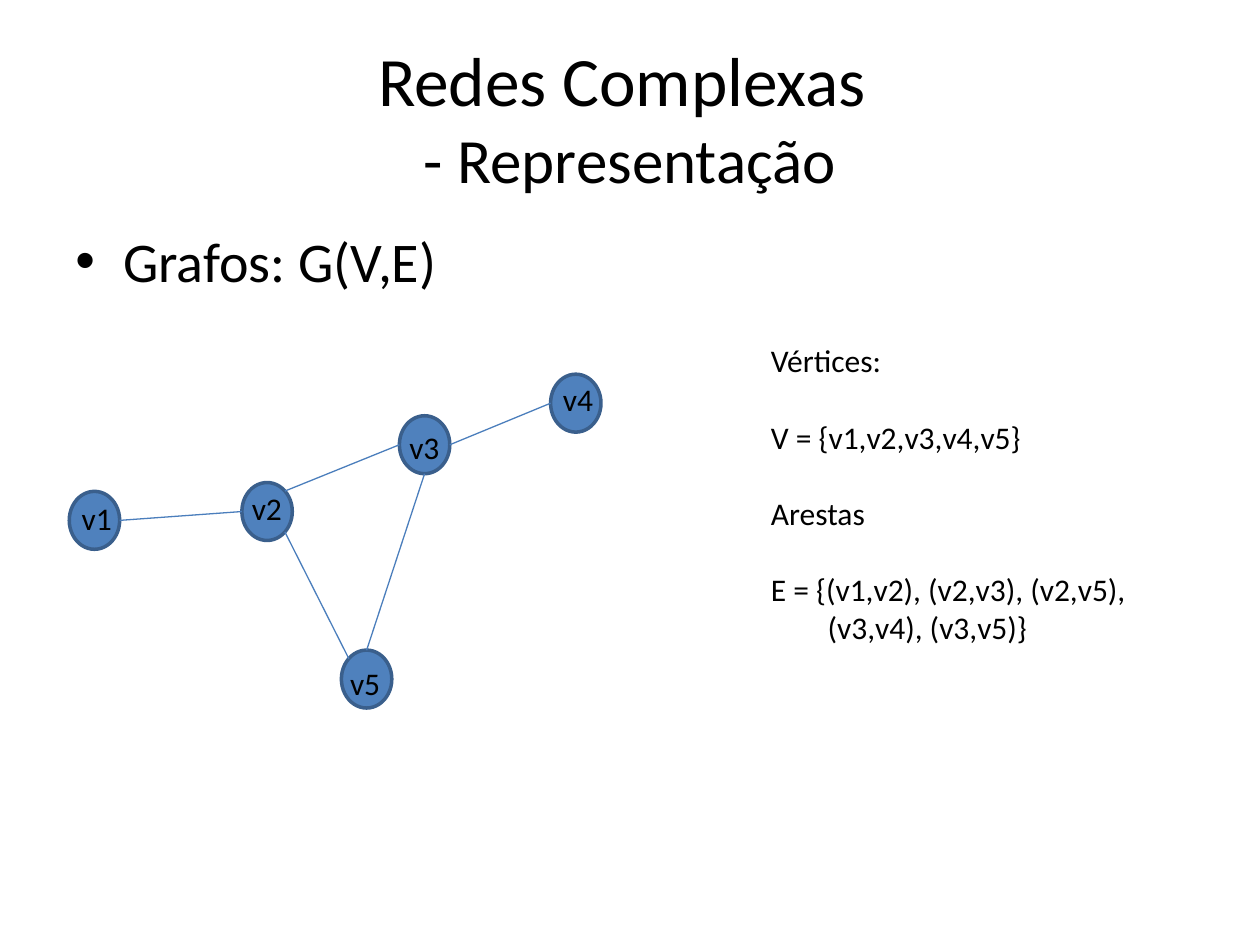
import math
from dataclasses import dataclass

import pptx
import pptx.dml.color
import pptx.enum.shapes
import pptx.enum.text
import pptx.util
from lxml import etree
from pptx.oxml.ns import qn
from pptx.util import Inches, Pt


@dataclass(frozen=True)
class Theme:
    font: str = "Calibri"
    ink: str = "000000"
    node_fill: str = "4F81BD"
    node_line: str = "3A5F8C"
    edge_line: str = "4B7EBC"
    title_size: float = 39.6
    subtitle_size: float = 36
    body_size: float = 32
    label_size: float = 18
    node_line_width: float = 2
    edge_line_width: float = 0.75


@dataclass(frozen=True)
class Vertex:
    left: float
    top: float
    label_left: float
    label_top: float


@dataclass(frozen=True)
class Edge:
    start: str
    start_angle: int
    end: str
    end_angle: int


@dataclass(frozen=True)
class Line:
    text: str
    space_before: float = 0
    indent: float = 0


THEME = Theme()
NODE_WIDTH, NODE_HEIGHT = 0.4, 0.46
LABEL_WIDTH, LABEL_HEIGHT = 0.44, 0.4
RIGHT, TOP_RIGHT, TOP, TOP_LEFT, LEFT, BOTTOM, BOTTOM_RIGHT = 0, 45, 90, 135, 180, 270, 315
BLANK_LINE = 22

VERTICES = {
    "v1": Vertex(0.55, 3.9, 0.55, 3.91),
    "v2": Vertex(1.92, 3.83, 1.9, 3.83),
    "v3": Vertex(3.17, 3.3, 3.15, 3.35),
    "v4": Vertex(4.37, 2.97, 4.37, 2.97),
    "v5": Vertex(2.71, 5.16, 2.68, 5.22),
}
EDGES = [
    Edge("v2", TOP_RIGHT, "v3", LEFT),
    Edge("v2", BOTTOM_RIGHT, "v5", TOP_LEFT),
    Edge("v3", BOTTOM, "v5", TOP),
    Edge("v3", RIGHT, "v4", LEFT),
    Edge("v1", RIGHT, "v2", LEFT),
]
DEFINITIONS = [
    Line("Vértices:"),
    Line("V = {v1,v2,v3,v4,v5}", BLANK_LINE),
    Line("Arestas", BLANK_LINE),
    Line("E = {(v1,v2), (v2,v3), (v2,v5),", BLANK_LINE),
    Line("(v3,v4), (v3,v5)}", indent=0.45),
]


def color(value: str) -> pptx.dml.color.RGBColor:
    return pptx.dml.color.RGBColor.from_string(value)


def add_box(page, left: float, top: float, width: float, height: float, wrap: bool = True):
    box = page.shapes.add_textbox(Inches(left), Inches(top), Inches(width), Inches(height))
    box.text_frame.word_wrap = wrap
    return box.text_frame


def add_text(para, text: str, size: float) -> None:
    span = para.add_run()
    span.text = text
    for name, value in {"name": THEME.font, "size": Pt(size)}.items():
        setattr(span.font, name, value)
    span.font.color.rgb = color(THEME.ink)


def add_title(page) -> None:
    frame = add_box(page, 0.5, 0.3, 9, 1.25)
    frame.vertical_anchor = pptx.enum.text.MSO_ANCHOR.MIDDLE
    para = frame.paragraphs[0]
    para.alignment = pptx.enum.text.PP_ALIGN.CENTER
    add_text(para, "Redes Complexas ", THEME.title_size)
    para.add_line_break()
    add_text(para, "- Representação", THEME.subtitle_size)


def add_bullet(page) -> None:
    para = add_box(page, 0.5, 1.75, 9, 4.95).paragraphs[0]
    para.space_before = Pt(THEME.body_size * 0.2)
    add_text(para, "Grafos: G(V,E)", THEME.body_size)
    properties = para._p.get_or_add_pPr()
    for name, value in {"marL": 0.38, "indent": -0.38}.items():
        properties.set(name, str(Inches(value)))
    etree.SubElement(properties, qn("a:buFont"), typeface="Arial")
    etree.SubElement(properties, qn("a:buChar"), char="•")


def add_node(page, vertex: Vertex) -> None:
    node = page.shapes.add_shape(
        pptx.enum.shapes.MSO_SHAPE.OVAL,
        Inches(vertex.left), Inches(vertex.top), Inches(NODE_WIDTH), Inches(NODE_HEIGHT),
    )
    node.shadow.inherit = False
    node.fill.solid()
    node.fill.fore_color.rgb = color(THEME.node_fill)
    node.line.color.rgb = color(THEME.node_line)
    node.line.width = Pt(THEME.node_line_width)


def rim_point(vertex: Vertex, angle: int) -> tuple[int, int]:
    radians = math.radians(angle)
    x = vertex.left + NODE_WIDTH / 2 * (1 + math.cos(radians))
    y = vertex.top + NODE_HEIGHT / 2 * (1 - math.sin(radians))
    return Inches(x), Inches(y)


def add_edge(page, edge: Edge) -> None:
    connector = page.shapes.add_connector(
        pptx.enum.shapes.MSO_CONNECTOR.STRAIGHT,
        *rim_point(VERTICES[edge.start], edge.start_angle),
        *rim_point(VERTICES[edge.end], edge.end_angle),
    )
    connector.line.color.rgb = color(THEME.edge_line)
    connector.line.width = Pt(THEME.edge_line_width)
    etree.SubElement(connector._element.spPr, qn("a:effectLst"))


def add_definitions(page) -> None:
    frame = add_box(page, 6.02, 2.66, 3.05, 2.52, wrap=False)
    for index, line in enumerate(DEFINITIONS):
        para = frame.add_paragraph() if index else frame.paragraphs[0]
        para.space_before = Pt(line.space_before)
        if line.indent:
            para._p.get_or_add_pPr().set("marL", str(Inches(line.indent)))
        add_text(para, line.text, THEME.label_size)


def add_label(page, name: str, vertex: Vertex) -> None:
    frame = add_box(page, vertex.label_left, vertex.label_top, LABEL_WIDTH, LABEL_HEIGHT, wrap=False)
    add_text(frame.paragraphs[0], name, THEME.label_size)


def main() -> None:
    deck = pptx.Presentation()
    deck.slide_width, deck.slide_height = Inches(10), Inches(7.5)
    page = deck.slides.add_slide(deck.slide_layouts[6])
    add_title(page)
    add_bullet(page)
    for vertex in VERTICES.values():
        add_node(page, vertex)
    for edge in EDGES:
        add_edge(page, edge)
    add_definitions(page)
    for name, vertex in VERTICES.items():
        add_label(page, name, vertex)
    deck.save("out.pptx")


if __name__ == "__main__":
    main()
